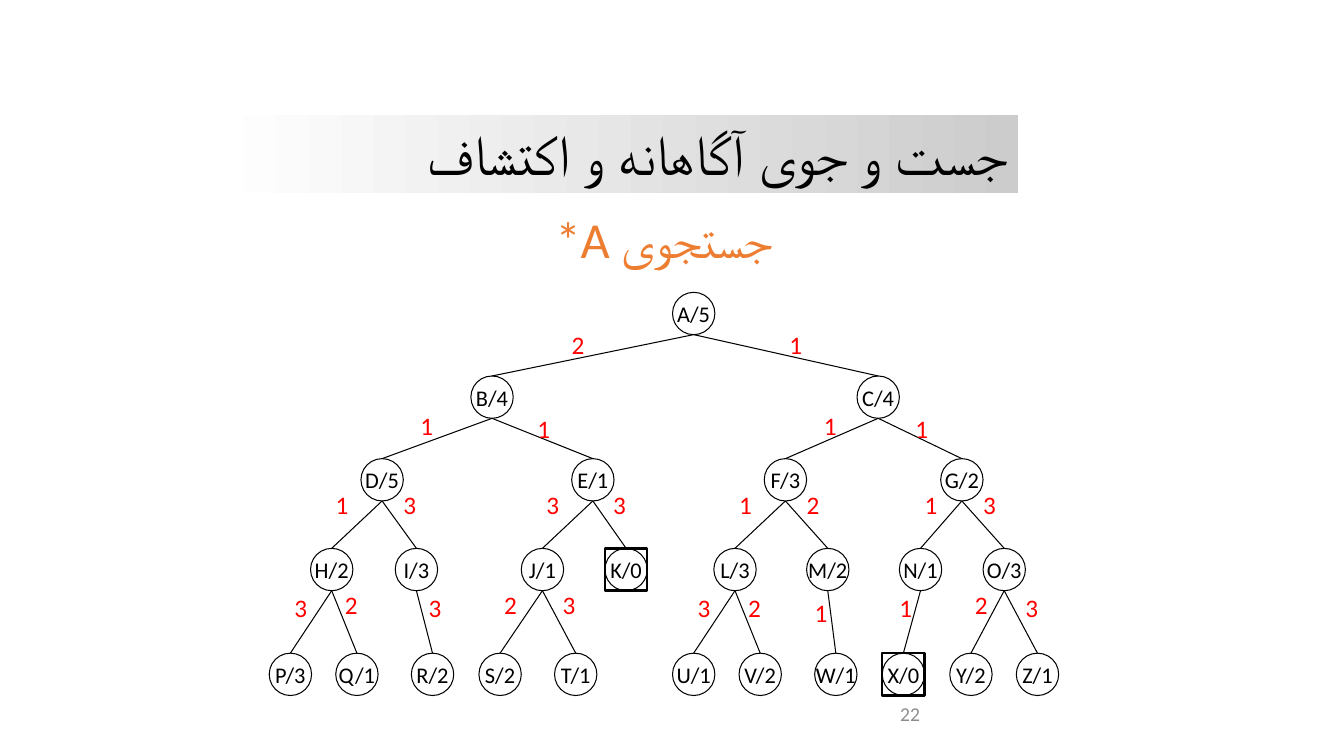
"""Build a slide that shows an A* search tree with step costs."""
from lxml import etree
from pptx import Presentation
from pptx.dml.color import RGBColor
from pptx.enum.shapes import MSO_CONNECTOR, MSO_SHAPE
from pptx.enum.text import MSO_ANCHOR, MSO_AUTO_SIZE, PP_ALIGN
from pptx.oxml.ns import qn
from pptx.util import Inches, Pt

LEFT, CENTER, RIGHT = PP_ALIGN.LEFT, PP_ALIGN.CENTER, PP_ALIGN.RIGHT
TOP, MIDDLE = MSO_ANCHOR.TOP, MSO_ANCHOR.MIDDLE
NO_RESIZE = MSO_AUTO_SIZE.NONE
OVAL, RECTANGLE = MSO_SHAPE.OVAL, MSO_SHAPE.RECTANGLE
STRAIGHT = MSO_CONNECTOR.STRAIGHT

BLACK = RGBColor(0x00, 0x00, 0x00)
WHITE = RGBColor(0xFF, 0xFF, 0xFF)
SILVER = RGBColor(0xCC, 0xCC, 0xCC)
GRAY = RGBColor(0x8C, 0x8C, 0x8C)
ORANGE = RGBColor(0xED, 0x7D, 0x31)
RED = RGBColor(0xFF, 0x00, 0x00)

NODE_SIZE = 0.42
COST_SIZE = (0.08, 0.3)
ROOT = ("A/5", 6.67, 2.9)

# Each level: top, then (name, left, parent, cost, cost left, cost top).
LEVELS = [
    (3.73, [
        ("B/4", 4.67, "A/5", 2, 5.67, 3.27),
        ("C/4", 8.5, "A/5", 1, 7.83, 3.27),
    ]),
    (4.55, [
        ("D/5", 3.58, "B/4", 1, 4.17, 4.07),
        ("E/1", 5.67, "B/4", 1, 5.33, 4.1),
        ("F/3", 7.58, "C/4", 1, 8.17, 4.07),
        ("G/2", 9.33, "C/4", 1, 9.08, 4.1),
    ]),
    (5.44, [
        ("H/2", 3.08, "D/5", 1, 3.33, 4.85),
        ("I/3", 3.92, "D/5", 3, 4, 4.85),
        ("J/1", 5.17, "E/1", 3, 5.42, 4.85),
        ("K/0", 6, "E/1", 3, 6.08, 4.85),
        ("L/3", 7.08, "F/3", 1, 7.33, 4.85),
        ("M/2", 8, "F/3", 2, 8, 4.85),
        ("N/1", 8.92, "G/2", 1, 9.17, 4.85),
        ("O/3", 9.75, "G/2", 3, 9.75, 4.85),
    ]),
    (6.48, [
        ("P/3", 2.67, "H/2", 3, 2.92, 5.88),
        ("Q/1", 3.33, "H/2", 2, 3.42, 5.85),
        ("R/2", 4.08, "I/3", 3, 4.25, 5.88),
        ("S/2", 4.75, "J/1", 2, 5, 5.85),
        ("T/1", 5.5, "J/1", 3, 5.58, 5.85),
        ("U/1", 6.67, "L/3", 3, 6.92, 5.88),
        ("V/2", 7.33, "L/3", 2, 7.42, 5.88),
        ("W/1", 8.08, "M/2", 1, 8.08, 5.93),
        ("X/0", 8.75, "N/1", 1, 8.92, 5.88),
        ("Y/2", 9.42, "O/3", 2, 9.67, 5.85),
        ("Z/1", 10.08, "O/3", 3, 10.17, 5.88),
    ]),
]


def write(shape, text, size, color=BLACK, font="Calibri", align=LEFT,
          anchor=TOP, wrap=True, margin=None, rtl=False):
    """Put one formatted paragraph into a shape."""
    frame = shape.text_frame
    frame.auto_size = NO_RESIZE
    frame.word_wrap = wrap
    frame.vertical_anchor = anchor
    if margin is not None:
        frame.margin_left = frame.margin_right = Inches(margin)
        frame.margin_top = frame.margin_bottom = Inches(margin)
    para = frame.paragraphs[0]
    para.alignment = align
    if rtl:
        para._p.get_or_add_pPr().set("rtl", "1")
    span = para.add_run()
    span.text = text
    span.font.size = Pt(size)
    span.font.name = font
    span.font.color.rgb = color
    complex_font = etree.SubElement(span._r.get_or_add_rPr(), qn("a:cs"))
    complex_font.set("typeface", font)


class TreeSlide:
    """Hold the slide and the style of its tree."""

    def __init__(self, deck):
        """Add a title-only slide to the deck."""
        self.slide = deck.slides.add_slide(deck.slide_layouts[5])
        self.shapes = self.slide.shapes
        self.line_width = Pt(0.75)
        self.goal_width = Pt(1.75)

    def title(self, text, left, top, width, height):
        """Place the title on a band that fades from white to silver."""
        title = self.shapes.title
        title.left, title.top = Inches(left), Inches(top)
        title.width, title.height = Inches(width), Inches(height)
        title.fill.gradient()
        title.fill.gradient_angle = 0
        for stop, color in zip(title.fill.gradient_stops, (WHITE, SILVER)):
            stop.color.rgb = color
        write(title, text, 40, font="Times New Roman", align=RIGHT)

    def text(self, text, left, top, width, height, **style):
        """Add a text box."""
        box = self.shapes.add_textbox(Inches(left), Inches(top),
                                      Inches(width), Inches(height))
        write(box, text, **style)

    def outline(self, kind, left, top, width):
        """Add a black outlined shape of node size."""
        shape = self.shapes.add_shape(kind, Inches(left), Inches(top),
                                      Inches(NODE_SIZE), Inches(NODE_SIZE))
        shape.shadow.inherit = False
        shape.line.color.rgb = BLACK
        shape.line.width = width
        return shape

    def node(self, name, left, top):
        """Add a node, framed when its estimate is zero."""
        node = self.outline(OVAL, left, top, self.line_width)
        node.fill.solid()
        node.fill.fore_color.rgb = WHITE
        write(node, name, 16, align=CENTER, anchor=MIDDLE, wrap=False)
        if name.endswith("/0"):
            self.outline(RECTANGLE, left, top, self.goal_width).fill.background()
        return node

    def edge(self, parent, child):
        """Join the bottom of a parent to the top of its child."""
        edge = self.shapes.add_connector(
            STRAIGHT, parent.left + parent.width // 2, parent.top + parent.height,
            child.left + child.width // 2, child.top)
        edge.end_connect(child, 0)
        edge.line.color.rgb = BLACK
        edge.line.width = self.line_width
        etree.SubElement(edge._element.spPr, qn("a:effectLst"))


def main():
    """Create the deck and draw the search tree."""
    deck = Presentation()
    deck.slide_width, deck.slide_height = Inches(13.33), Inches(7.5)
    page = TreeSlide(deck)
    page.title("جست و جوی آگاهانه و اکتشاف", 2.1, 1.14, 8, 0.77)
    page.text("جستجوی A*", 2.33, 2.02, 8.51, 0.7,
              size=36, color=ORANGE, align=CENTER, rtl=True)
    page.text("22", 8.83, 6.83, 2.08, 0.5, size=14, color=GRAY, anchor=MIDDLE)
    nodes = {ROOT[0]: page.node(*ROOT)}
    for top, children in LEVELS:
        for name, left, parent, cost, cost_left, cost_top in children:
            nodes[name] = page.node(name, left, top)
            page.edge(nodes[parent], nodes[name])
            page.text(str(cost), cost_left, cost_top, *COST_SIZE,
                      size=18, color=RED, margin=0)
    deck.save("out.pptx")


if __name__ == "__main__":
    main()
